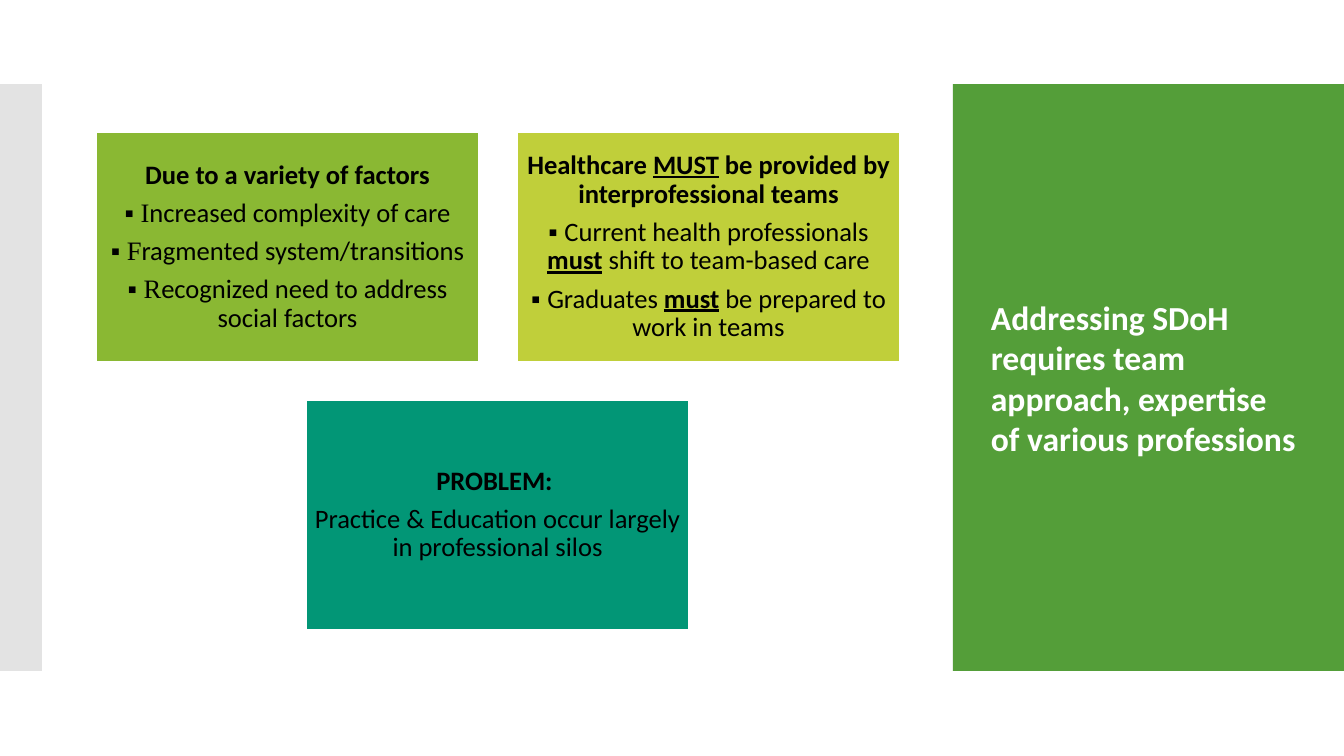
from lxml import etree
from pptx import Presentation
from pptx.dml.color import RGBColor
from pptx.enum.shapes import MSO_SHAPE
from pptx.enum.text import MSO_ANCHOR, PP_ALIGN
from pptx.oxml.ns import qn
from pptx.util import Emu, Pt

COLORS = {"panel": "549E39", "strip": "C8C8C8", "white": "FFFFFF", "black": "000000",
          "factors": "8AB833", "teams": "C0CF3A", "problem": "029676"}
BODY, BULLET = "Calibri", "Times New Roman"

TITLE = "Addressing SDoH requires team approach, expertise of various professions"
# Each run is (text, style): b = bold, u = underlined, t = bullet font
BOXES = [
    ("factors", [
        [("Due to a variety of factors", "b")],
        [("▪ I", "t"), ("ncreased complexity of care", "")],
        [("▪ F", "t"), ("ragmented system/transitions", "")],
        [("▪ R", "t"), ("ecognized need to address social factors", "")],
    ]),
    ("teams", [
        [("Healthcare ", "b"), ("MUST", "bu"),
         (" be provided by interprofessional teams", "b")],
        [("▪ ", "t"), ("Current health professionals ", ""), ("must", "bu"),
         (" shift to team-based care", "")],
        [("▪ ", "t"), ("Graduates ", ""), ("must", "bu"),
         (" be prepared to work in teams", "")],
    ]),
    ("problem", [
        [("PROBLEM: ", "b")],
        [("Practice & Education occur largely in professional silos", "")],
    ]),
]

SLIDE_W, SLIDE_H = 1344, 756
BAND_TOP, BAND_H = 84, 587
PANEL_X, STRIP_W = 953, 42
GRID_X, GRID_Y, BOX_W, BOX_H, GAP = 96, 132, 383, 230, 38
COLUMNS = 2
SCALE = 12192000 / SLIDE_W


def px(n):
    return Emu(round(n * SCALE))


def color(name):
    return RGBColor.from_string(COLORS[name])


def add_rect(slide, x, y, w, h, fill):
    sp = slide.shapes.add_shape(MSO_SHAPE.RECTANGLE, px(x), px(y), px(w), px(h))
    sp.shadow.inherit = False
    sp.fill.solid()
    sp.fill.fore_color.rgb = color(fill)
    sp.line.fill.background()
    return sp


def add_run(p, text, style, size, ink):
    r = p.add_run()
    r.text = text
    r.font.name = BULLET if "t" in style else BODY
    r.font.size = Pt(size)
    r.font.bold = "b" in style
    r.font.underline = "u" in style
    r.font.color.rgb = color(ink)


def add_box(slide, x, y, fill, paragraphs):
    sp = add_rect(slide, x, y, BOX_W, BOX_H, fill)
    sp.line.color.rgb = color("white")
    sp.line.width = Pt(0.85)
    tf = sp.text_frame
    tf.word_wrap = True
    tf.vertical_anchor = MSO_ANCHOR.MIDDLE
    tf.margin_left = tf.margin_right = tf.margin_top = tf.margin_bottom = px(8)
    for i, runs in enumerate(paragraphs):
        p = tf.add_paragraph() if i else tf.paragraphs[0]
        p.alignment = PP_ALIGN.CENTER
        p.line_spacing = 0.9
        p.space_after = Pt(6.7)
        for text, style in runs:
            add_run(p, text, style, 19, "black")


def add_title(slide):
    sp = slide.shapes.add_textbox(px(981), px(124), px(325), px(507))
    tf = sp.text_frame
    tf.word_wrap = True
    tf.vertical_anchor = MSO_ANCHOR.MIDDLE
    add_run(tf.paragraphs[0], TITLE, "b", 24, "white")


def main():
    prs = Presentation()
    prs.slide_width, prs.slide_height = px(SLIDE_W), px(SLIDE_H)
    slide = prs.slides.add_slide(prs.slide_layouts[6])

    add_rect(slide, PANEL_X, BAND_TOP, SLIDE_W - PANEL_X, BAND_H, "panel")
    add_title(slide)
    strip = add_rect(slide, 0, BAND_TOP, STRIP_W, BAND_H, "strip")
    clr = strip.fill._xPr.find(qn("a:solidFill"))[0]
    etree.SubElement(clr, qn("a:alpha"), val="50000")

    for i, (fill, paragraphs) in enumerate(BOXES):
        row, col = divmod(i, COLUMNS)
        in_row = min(COLUMNS, len(BOXES) - row * COLUMNS)
        indent = (COLUMNS - in_row) * (BOX_W + GAP) // 2  # centres a short row
        add_box(slide, GRID_X + indent + col * (BOX_W + GAP),
                GRID_Y + row * (BOX_H + GAP), fill, paragraphs)

    prs.save("out.pptx")


if __name__ == "__main__":
    main()
